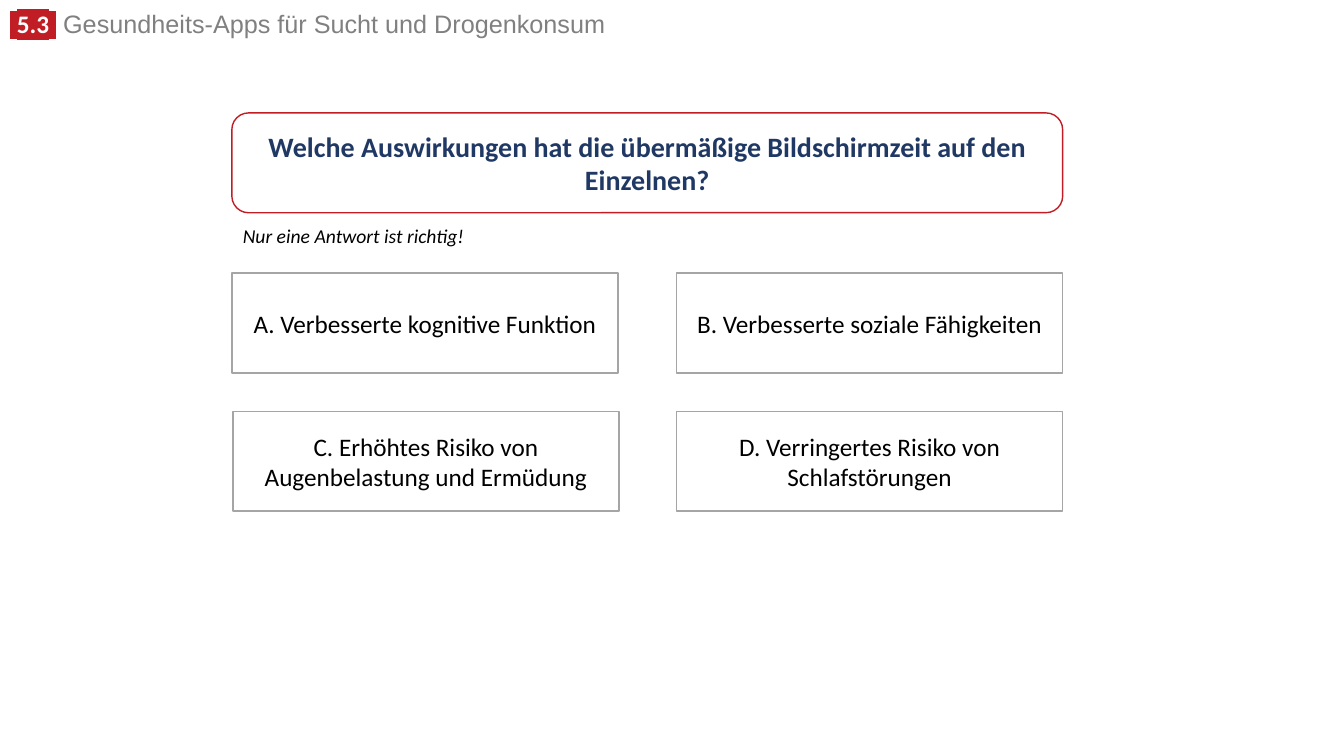
from dataclasses import dataclass

import lxml.etree
import pptx
import pptx.dml.color
import pptx.enum.shapes
import pptx.enum.text
import pptx.oxml.ns
import pptx.util
from pptx.util import Inches

RED = "C01E24"
SHAPES = pptx.enum.shapes.MSO_SHAPE
ALIGN = pptx.enum.text.PP_ALIGN


@dataclass
class Card:
    text: str
    left: float
    top: float
    width: float = 3.83
    outline: str = "A5A5A5"
    color: str = "000000"
    size: int = 18
    bold: bool = False
    form: SHAPES = SHAPES.RECTANGLE


def rgb(value: str) -> pptx.dml.color.RGBColor:
    return pptx.dml.color.RGBColor.from_string(value)


def add_text(paragraph, text: str, *, size: int = 18, font: str = "Calibri",
             color: str = "000000", bold: bool = False, italic: bool = False,
             highlight: str = "") -> None:
    run = paragraph.add_run()
    run.text = text
    run.font.size = pptx.util.Pt(size)
    run.font.name = font
    run.font.bold = bold
    run.font.italic = italic
    run.font.color.rgb = rgb(color)
    if highlight:
        qn = pptx.oxml.ns.qn
        marker = lxml.etree.Element(qn("a:highlight"))
        lxml.etree.SubElement(marker, qn("a:srgbClr"), val=highlight)
        run.font._element.find(qn("a:solidFill")).addnext(marker)


def add_text_box(slide, left: float, top: float, width: float, height: float,
                 wrap: bool):
    box = slide.shapes.add_textbox(Inches(left), Inches(top), Inches(width), Inches(height))
    box.text_frame.word_wrap = wrap
    box.text_frame.auto_size = pptx.enum.text.MSO_AUTO_SIZE.SHAPE_TO_FIT_TEXT
    return box.text_frame.paragraphs[0]


def add_card(slide, card: Card) -> None:
    shape = slide.shapes.add_shape(card.form, Inches(card.left), Inches(card.top),
                                   Inches(card.width), Inches(0.99))
    shape.shadow.inherit = False
    shape.fill.solid()
    shape.fill.fore_color.rgb = rgb("FFFFFF")
    shape.line.color.rgb = rgb(card.outline)
    shape.line.width = pptx.util.Pt(1)
    shape.text_frame.word_wrap = True
    shape.text_frame.vertical_anchor = pptx.enum.text.MSO_ANCHOR.MIDDLE
    paragraph = shape.text_frame.paragraphs[0]
    paragraph.alignment = ALIGN.CENTER
    add_text(paragraph, card.text, size=card.size, color=card.color, bold=card.bold)


def main() -> None:
    presentation = pptx.Presentation()
    presentation.slide_width = Inches(13.33)
    presentation.slide_height = Inches(7.5)
    slide = presentation.slides.add_slide(presentation.slide_layouts[6])

    header = add_text_box(slide, 0, 0.09, 9.52, 0.35, wrap=True)
    header.line_spacing = 0.8
    for text, font in ((" ", "Arial"), ("5.3", "Calibri"), (" ", "Arial")):
        add_text(header, text, font=font, color="FFFFFF", bold=True, highlight=RED)
    add_text(header, " Gesundheits-Apps für Sucht und Drogenkonsum",
             font="Arial", color="808080")

    question = Card("Welche Auswirkungen hat die übermäßige Bildschirmzeit auf den Einzelnen?",
                    2.3, 1.12, width=8.24, outline=RED, color="203864", size=20,
                    bold=True, form=SHAPES.ROUNDED_RECTANGLE)
    answers = [
        Card("A. Verbesserte kognitive Funktion", 2.3, 2.71),
        Card("B. Verbesserte soziale Fähigkeiten", 6.71, 2.71),
        Card("C. Erhöhtes Risiko von Augenbelastung und Ermüdung", 2.31, 4.08),
        Card("D. Verringertes Risiko von Schlafstörungen", 6.71, 4.08),
    ]
    for card in [question, *answers]:
        add_card(slide, card)

    hint = add_text_box(slide, 2.31, 2.17, 2.42, 0.34, wrap=False)
    add_text(hint, "Nur eine Antwort ist richtig!", size=14, italic=True)

    presentation.save("out.pptx")


if __name__ == "__main__":
    main()
